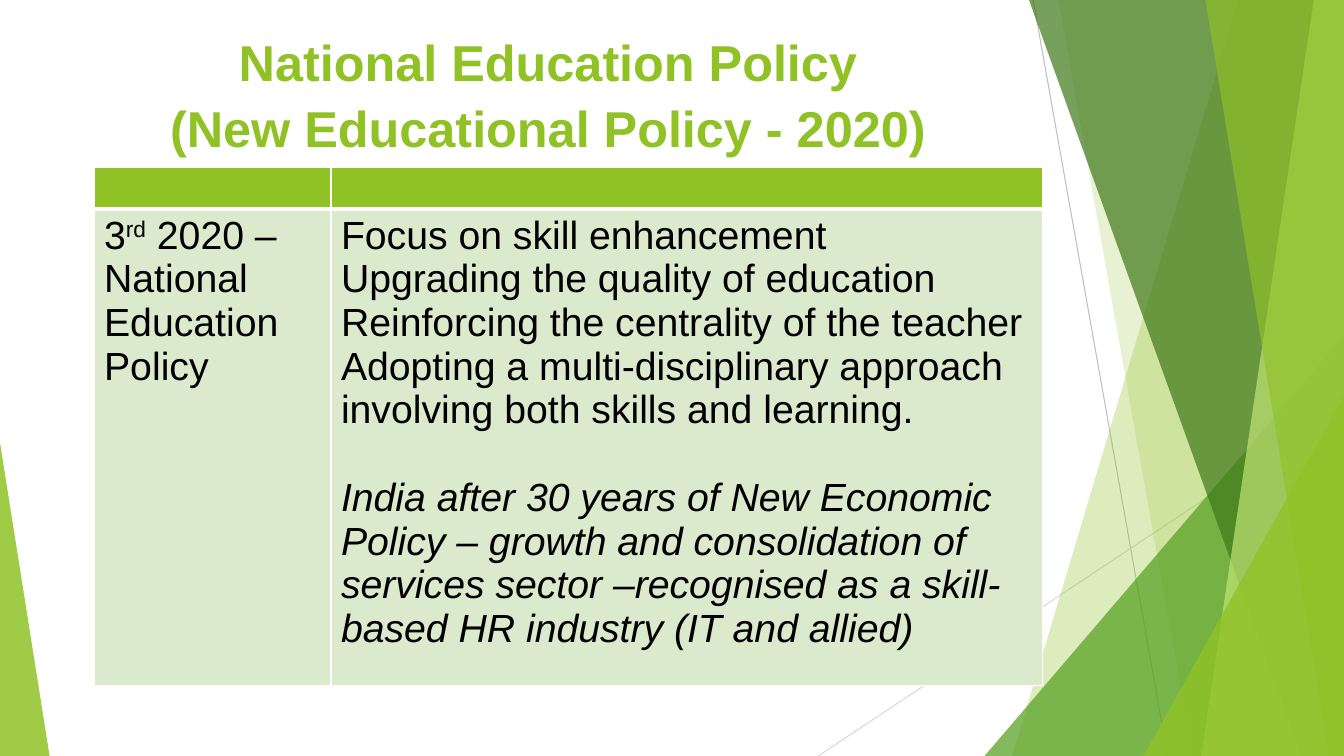
from dataclasses import dataclass
from lxml.etree import SubElement
from pptx import Presentation
from pptx.dml.color import RGBColor as RGB
from pptx.enum.shapes import MSO_CONNECTOR as Connector, MSO_SHAPE as Shape
from pptx.enum.text import MSO_ANCHOR as Anchor, MSO_AUTO_SIZE as AutoSize, PP_ALIGN as Align
from pptx.oxml import parse_xml
from pptx.oxml.ns import nsdecls, qn
from pptx.util import Inches, Pt

COLUMNS, ROWS = 160, 90


@dataclass(frozen=True)
class Theme:
    font: str = "Arial"
    green: str = "90C226"
    leaf: str = "54A021"
    forest: str = "3F7819"
    lime: str = "C0E474"
    pale: str = "DBE9CD"
    white: str = "FFFFFF"
    black: str = "000000"
    dark_rule: str = "BFBFBF"
    light_rule: str = "D9D9D9"
    title_size: float = 36
    body_size: float = 28
    rule_width: float = 0.75
    border: float = 1
    header_border: float = 3


def apply(target, values):
    for name, value in values.items():
        setattr(target, name, value)


class PolicySlide:
    def __init__(self, deck, theme):
        self.theme = theme
        self.column = deck.slide_width / COLUMNS
        self.row = deck.slide_height / ROWS
        self.slide = deck.slides.add_slide(deck.slide_layouts[5])
        self.shapes = self.slide.shapes

    def x(self, columns):
        return round(columns * self.column)

    def y(self, rows):
        return round(rows * self.row)

    def box(self, left, top, width, height):
        return self.x(left), self.y(top), self.x(width), self.y(height)

    def format_font(self, font, size, color, **extra):
        apply(font, {"name": self.theme.font, "size": Pt(size), **extra})
        font.color.rgb = RGB.from_string(color)

    def title(self, text, area):
        heading = self.shapes.title
        places = zip(("left", "top", "width", "height"), self.box(*area))
        apply(heading, dict(places))
        frame = heading.text_frame
        frame.text = text
        apply(frame, {"word_wrap": True, "auto_size": AutoSize.NONE,
                      "vertical_anchor": Anchor.TOP})
        line = frame.paragraphs[0]
        apply(line, {"alignment": Align.CENTER, "line_spacing": 1.09})
        for run in line.runs:
            self.format_font(run.font, self.theme.title_size, self.theme.green, bold=True)

    def rule(self, start, end, color):
        rule = self.shapes.add_connector(
            Connector.STRAIGHT, self.x(start[0]), self.y(start[1]), self.x(end[0]), self.y(end[1]))
        rule.line.width = Pt(self.theme.rule_width)
        rule.line.color.rgb = RGB.from_string(color)
        SubElement(rule._element.spPr, qn("a:effectLst"))

    def tint(self, shape, color, opacity):
        shape.shadow.inherit = False
        shape.line.fill.background()
        shape.fill.solid()
        shape.fill.fore_color.rgb = RGB.from_string(color)
        paint = shape._element.spPr.find(qn("a:solidFill"))[0]
        SubElement(paint, qn("a:alpha")).set("val", str(opacity * 1000))

    def beam(self, top_left, bottom_left, color, opacity):
        outline = self.shapes.build_freeform(self.x(top_left), 0)
        corners = [(COLUMNS, 0), (COLUMNS, ROWS), (bottom_left, ROWS)]
        outline.add_line_segments([(self.x(c), self.y(r)) for c, r in corners], close=True)
        self.tint(outline.convert_to_shape(), color, opacity)

    def wedge(self, left, right, top, apex, color, opacity):
        wedge = self.shapes.add_shape(
            Shape.ISOSCELES_TRIANGLE, *self.box(left, top, right - left, ROWS - top))
        wedge.adjustments[0] = apex
        self.tint(wedge, color, opacity)

    def edge_cell(self, cell, color, widths):
        cell.fill.solid()
        cell.fill.fore_color.rgb = RGB.from_string(color)
        properties = cell._tc.get_or_add_tcPr()
        for place, (side, width) in enumerate(zip("LRTB", widths)):
            properties.insert(place, parse_xml(
                f'<a:ln{side} {nsdecls("a")} w="{Pt(width)}"><a:solidFill>'
                f'<a:srgbClr val="{self.theme.white}"/></a:solidFill></a:ln{side}>'))

    def write_cell(self, cell, paragraphs):
        frame = cell.text_frame
        for number, (runs, gap, italic) in enumerate(paragraphs):
            line = frame.add_paragraph() if number else frame.paragraphs[0]
            if gap:
                line.space_before = Pt(gap)
            for text, baseline in runs:
                run = line.add_run()
                run.text = text
                self.format_font(run.font, self.theme.body_size, self.theme.black, italic=italic)
                if baseline:
                    run._r.get_or_add_rPr().set("baseline", str(baseline * 1000))

    def table(self, left, top, widths, heights, body):
        theme = self.theme
        area = self.box(left, top, sum(widths), sum(heights))
        table = self.shapes.add_table(len(heights), len(widths), *area).table
        for column, width in zip(table.columns, widths):
            column.width = self.x(width)
        for row, height in zip(table.rows, heights):
            row.height = self.y(height)
        thin, thick = theme.border, theme.header_border
        for number, paragraphs in enumerate(body):
            self.edge_cell(table.cell(0, number), theme.green, (thin, thin, thin, thick))
            self.edge_cell(table.cell(1, number), theme.pale, (thin, thin, thick, thin))
            self.write_cell(table.cell(1, number), paragraphs)


POLICY = [([("3", 0), ("rd", 30), (" 2020 – National Education Policy", 0)], 0, False)]
AIMS = [
    "Focus on skill enhancement",
    "Upgrading the quality of education",
    "Reinforcing the centrality of the teacher",
    "Adopting a multi-disciplinary approach involving both skills and learning.",
]
OUTLOOK = ("India after 30 years of New Economic Policy – growth and consolidation of "
           "services sector –recognised as a skill-based HR industry (IT and allied)")


def main():
    deck = Presentation()
    apply(deck, {"slide_width": Inches(13.33), "slide_height": Inches(7.5)})
    theme = Theme()
    page = PolicySlide(deck, theme)

    page.rule((123, 0), (139, ROWS), theme.dark_rule)
    page.rule((COLUMNS, 48.4), (97.4, ROWS), theme.light_rule)
    page.beam(147.4, 120.5, theme.green, 30)
    page.beam(126, 142, theme.green, 20)
    page.wedge(117.2, COLUMNS, 40, 1, theme.leaf, 72)
    page.beam(122.5, 154.9, theme.forest, 70)
    page.beam(156.4, 143, theme.lime, 70)
    page.beam(143.5, 158.2, theme.green, 65)
    page.wedge(136.1, COLUMNS, 47.2, 1, theme.green, 80)
    page.wedge(0, 5.9, 52.7, 0, theme.green, 85)

    page.title("National Education Policy \v(New Educational Policy - 2020) ",
               (9.7, 2.5, 112.8, 17.3))
    aims = [([(aim, 0)], 0, False) for aim in AIMS]
    outlook = ([(OUTLOOK, 0)], 31.3, True)
    page.table(11.2, 19.95, (28.2, 84.7), (4.9, 56.8), (POLICY, aims + [outlook]))
    deck.save("out.pptx")


if __name__ == "__main__":
    main()
